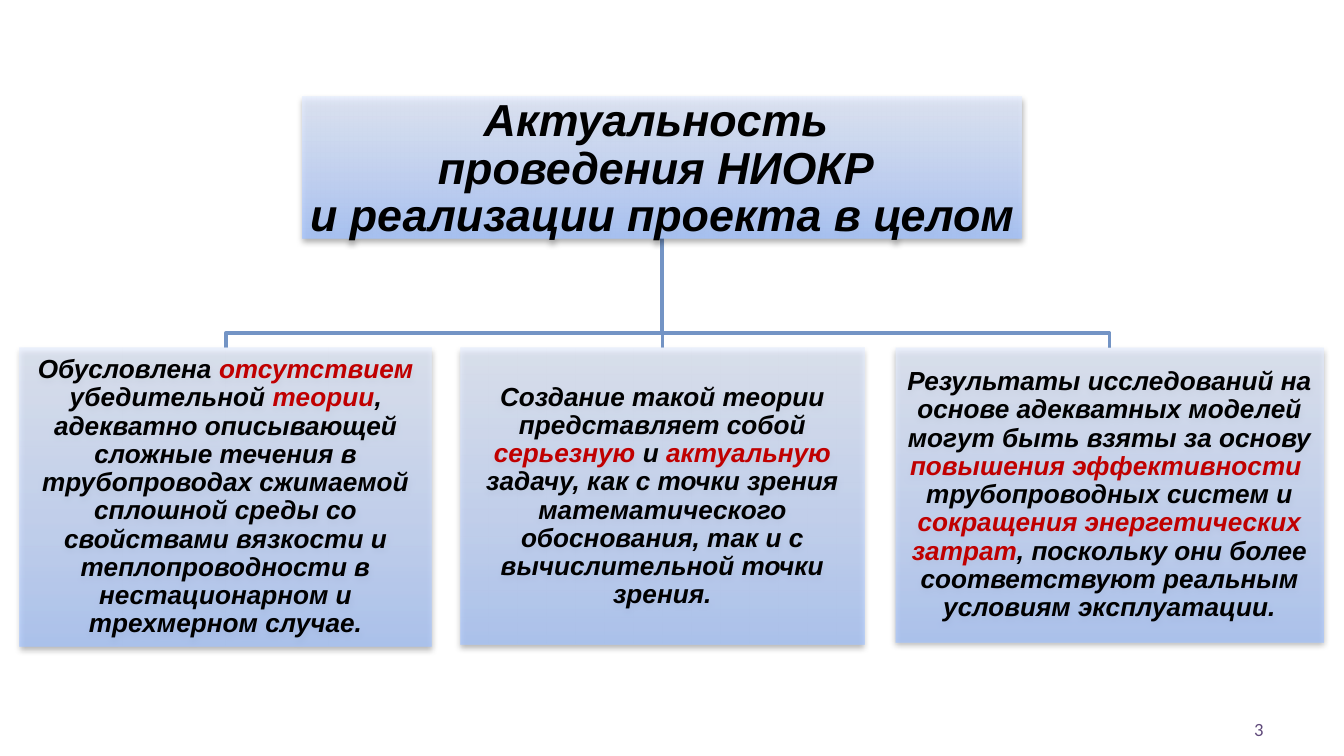
from dataclasses import dataclass
from itertools import cycle

from lxml.etree import SubElement
from pptx import Presentation
from pptx.dml.color import RGBColor
from pptx.enum.shapes import MSO_SHAPE as Preset
from pptx.enum.text import MSO_ANCHOR as Anchor, PP_ALIGN as Align
from pptx.oxml import parse_xml
from pptx.oxml.ns import nsdecls, qn
from pptx.util import Cm, Pt

BLACK = RGBColor(0x00, 0x00, 0x00)
RED = RGBColor(0xC0, 0x00, 0x00)
PURPLE = RGBColor(0x60, 0x4A, 0x7B)
STEEL = RGBColor(0x73, 0x94, 0xC5)
GRADIENT = (
    (0, RGBColor(0xA4, 0xC4, 0xFF)),
    (35, RGBColor(0xBF, 0xD4, 0xFF)),
    (100, RGBColor(0xE6, 0xEE, 0xFF)),
)
BUS_Y = 6.3
REASON_TOP = 6.58


@dataclass(frozen=True)
class Card:
    left: float
    top: float
    width: float
    height: float
    paragraphs: tuple[str, ...]
    size: float = 14
    opacity: int = 70
    inset: float = 0.03
    spacings: tuple[float, ...] = (0.9,)

    @property
    def center(self) -> float:
        return self.left + self.width / 2

    @property
    def bottom(self) -> float:
        return self.top + self.height


TOPIC = Card(
    5.72, 1.83, 13.59, 2.67,
    ("Актуальность \nпроведения НИОКР ", "и реализации проекта в целом "),
    size=24, opacity=80, inset=0.05, spacings=(0.9, 0.5),
)
REASONS = (
    Card(0.38, REASON_TOP, 7.77, 5.64, (
        "Обусловлена |отсутствием| убедительной |теории|, адекватно описывающей "
        "сложные течения в трубопроводах сжимаемой сплошной среды со свойствами "
        "вязкости и теплопроводности в нестационарном и трехмерном случае.",
    )),
    Card(8.71, REASON_TOP, 7.62, 5.61, (
        "Создание такой теории представляет собой |серьезную| и |актуальную| "
        "задачу, как с точки зрения математического обоснования, так и с "
        "вычислительной точки зрения.",
    )),
    Card(16.92, REASON_TOP, 8.1, 5.56, (
        "Результаты исследований на основе адекватных моделей могут быть взяты "
        "за основу |повышения эффективности|  трубопроводных систем и "
        "|сокращения энергетических затрат|, поскольку они более соответствуют "
        "реальным условиям эксплуатации.",
    )),
)


def write(frame, paragraphs: tuple[str, ...], *, size: float, font: str = "Arial",
          color: RGBColor = BLACK, accent: RGBColor = RED, bold: bool = True,
          align: Align = Align.CENTER, spacings: tuple[float, ...] = (1.0,),
          after: float = 0, inset: float | None = None) -> None:
    frame.word_wrap = True
    frame.vertical_anchor = Anchor.MIDDLE
    if inset is not None:
        frame.margin_left = frame.margin_right = Cm(inset)
        frame.margin_top = frame.margin_bottom = Cm(inset)
    for index, (text, spacing) in enumerate(zip(paragraphs, spacings)):
        paragraph = frame.add_paragraph() if index else frame.paragraphs[0]
        paragraph.alignment = align
        paragraph.line_spacing = spacing
        paragraph.space_after = Pt(after)
        for part, tint in zip(text.split("|"), cycle((color, accent))):
            for number, line in enumerate(part.split("\n")):
                if number:
                    paragraph.add_line_break()
                run = paragraph.add_run()
                run.text = line
                run.font.name = font
                run.font.size = Pt(size)
                run.font.bold = run.font.italic = bold
                run.font.color.rgb = tint


def shade(shape, opacity: int) -> None:
    stops = "".join(
        f'<a:gs pos="{position * 1000}"><a:srgbClr val="{color}">'
        f'<a:alpha val="{opacity * 1000}"/></a:srgbClr></a:gs>'
        for position, color in GRADIENT
    )
    gradient = parse_xml(
        f'<a:gradFill {nsdecls("a")} rotWithShape="1"><a:gsLst>{stops}</a:gsLst>'
        '<a:lin ang="16200000" scaled="0"/></a:gradFill>'
    )
    shape.shadow.inherit = False
    shape.line.fill.background()
    properties = shape.fill._xPr
    properties.find(qn("a:prstGeom")).addnext(gradient)
    shadow = SubElement(
        properties.find(qn("a:effectLst")), qn("a:outerShdw"),
        blurRad="40000", dist="20000", dir="5400000", rotWithShape="0",
    )
    tint = SubElement(shadow, qn("a:srgbClr"), val=str(BLACK))
    SubElement(tint, qn("a:alpha"), val="38000")


def draw_card(shapes, card: Card) -> None:
    box = shapes.add_shape(
        Preset.RECTANGLE, Cm(card.left), Cm(card.top), Cm(card.width), Cm(card.height)
    )
    shade(box, card.opacity)
    write(box.text_frame, card.paragraphs, size=card.size, inset=card.inset,
          spacings=card.spacings, after=card.size * 0.35)


def draw_branch(shapes, parent: Card, child: Card) -> None:
    builder = shapes.build_freeform(Cm(parent.center), Cm(parent.bottom))
    builder.add_line_segments([
        (Cm(parent.center), Cm(BUS_Y)),
        (Cm(child.center), Cm(BUS_Y)),
        (Cm(child.center), Cm(child.top)),
    ], close=False)
    branch = builder.convert_to_shape()
    branch.shadow.inherit = False
    branch.fill.background()
    branch.line.color.rgb = STEEL
    branch.line.width = Pt(2)


def main() -> None:
    """Build the slide on why the research project is relevant."""
    deck = Presentation()
    deck.slide_width, deck.slide_height = Cm(25.4), Cm(14.29)
    shapes = deck.slides.add_slide(deck.slide_layouts[6]).shapes
    page_number = shapes.add_textbox(Cm(18.21), Cm(13.41), Cm(5.92), Cm(0.76))
    write(page_number.text_frame, ("3",), size=10, font="Calibri", color=PURPLE,
          bold=False, align=Align.RIGHT)
    for reason in reversed(REASONS):
        draw_branch(shapes, TOPIC, reason)
    for card in (TOPIC, *REASONS):
        draw_card(shapes, card)
    deck.save("out.pptx")


if __name__ == "__main__":
    main()
